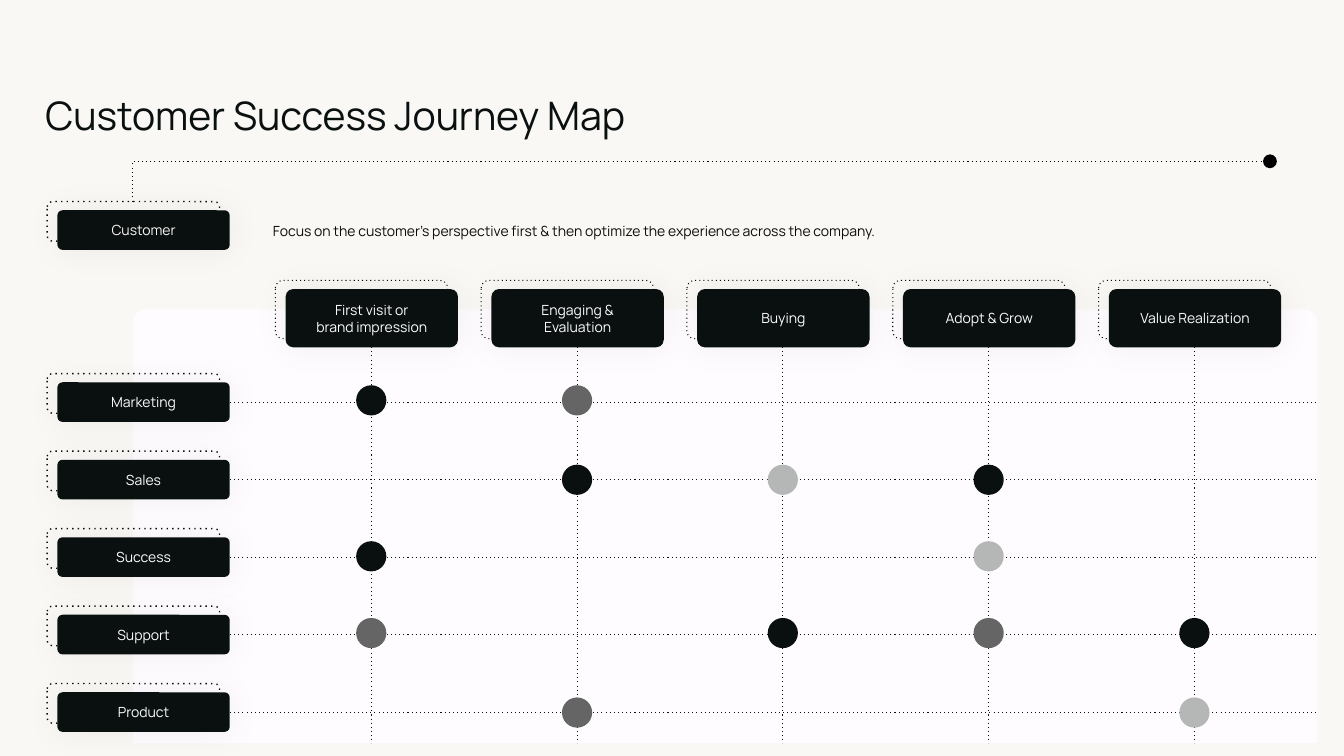
from lxml.etree import SubElement
from pptx import Presentation
from pptx.dml.color import RGBColor
from pptx.enum.dml import MSO_LINE
from pptx.enum.shapes import MSO_CONNECTOR, MSO_SHAPE
from pptx.enum.text import MSO_ANCHOR, MSO_AUTO_SIZE, PP_ALIGN
from pptx.oxml.ns import qn
from pptx.util import Pt

INK, PAPER, PANEL, GREY, SILVER = "09100F", "F9F8F5", "FEFCFF", "656565", "B5B7B7"
TEAMS = ["Marketing", "Sales", "Success", "Support", "Product"]
STAGES = ["First visit or\nbrand impression", "Engaging &\nEvaluation", "Buying",
          "Adopt & Grow", "Value Realization"]
# For each team: its marker height, then stage number and colour
MARKERS = [
    (286, {0: INK, 1: GREY}),
    (342.7, {1: INK, 2: SILVER, 3: INK}),
    (397.4, {0: INK, 3: SILVER}),
    (452.2, {0: GREY, 2: INK, 3: GREY, 4: INK}),
    (509, {1: GREY, 4: SILVER}),
]
COLUMN_X, COLUMN_STEP = 265.2, 147
ROW_Y, ROW_STEP = 287.4, 55.35
PANEL_RIGHT, PANEL_BOTTOM = 941, 531
BOX_WIDTH, TEAM_HEIGHT, STAGE_HEIGHT = 123.1, 28.3, 41.6
MARKER_SIZE = 21.6


def color(value):
    return RGBColor.from_string(value)


def write(shape, text, size=10, ink=PANEL, align=PP_ALIGN.CENTER,
          anchor=MSO_ANCHOR.MIDDLE, inset=None, space_after=0):
    """Fill the shape with one paragraph per line of text."""
    frame = shape.text_frame
    frame.word_wrap = True
    frame.auto_size = MSO_AUTO_SIZE.NONE
    frame.vertical_anchor = anchor
    if inset is not None:
        frame.margin_left = frame.margin_right = Pt(inset)
        frame.margin_top = frame.margin_bottom = Pt(inset)
    frame.text = text
    for para in frame.paragraphs:
        para.alignment = align
        para.space_before, para.space_after = Pt(0), Pt(space_after)
        for span in para.runs:
            span.font.name, span.font.size = "Manrope", Pt(size)
            span.font.color.rgb = color(ink)


deck = Presentation()
deck.slide_width, deck.slide_height = Pt(960), Pt(540)
page = deck.slides.add_slide(deck.slide_layouts[5])
page.background.fill.solid()
page.background.fill.fore_color.rgb = color(PAPER)
shapes = page.shapes

# Title and introduction
title = shapes.title
title.left, title.top, title.width, title.height = Pt(32.4), Pt(65.5), Pt(664.6), Pt(36.7)
title.fill.solid()
title.fill.fore_color.rgb = color(PAPER)
write(title, "Customer Success Journey Map", size=28, ink=INK, align=PP_ALIGN.LEFT,
      anchor=MSO_ANCHOR.TOP, inset=0, space_after=10)
intro = shapes.add_textbox(Pt(187.9), Pt(155.5), Pt(488.9), Pt(19.4))
write(intro, "Focus on the customer’s perspective first & then optimize the experience "
      "across the company.", ink="0C0C0C", align=PP_ALIGN.LEFT, anchor=MSO_ANCHOR.TOP)

# Panel behind the grid
panel = shapes.add_shape(MSO_SHAPE.ROUND_2_SAME_RECTANGLE, Pt(95), Pt(221),
                         Pt(PANEL_RIGHT - 95), Pt(PANEL_BOTTOM - 221))
panel.adjustments[0], panel.adjustments[1] = 0.03, 0
panel.shadow.inherit = False
panel.fill.solid()
panel.fill.fore_color.rgb = color(PANEL)
panel.line.fill.background()

# Grid lines and the elbow from the customer box
grid = []
for index in range(5):
    x, y = COLUMN_X + index * COLUMN_STEP, ROW_Y + index * ROW_STEP
    grid.append((158.4, y, PANEL_RIGHT, y))
    grid.append((x, 248, x, PANEL_BOTTOM))
dotted = []
for ends in grid:
    line = shapes.add_connector(MSO_CONNECTOR.STRAIGHT, *map(Pt, ends))
    dotted.append((line, 0.75, INK))
elbow = shapes.add_connector(MSO_CONNECTOR.ELBOW, Pt(486.6), Pt(-276.5), Pt(515.4), Pt(535.7))
elbow._element.spPr.find(qn("a:prstGeom")).set("prst", "bentConnector2")
elbow._element.spPr.find(qn("a:xfrm")).set("rot", str(270 * 60000))
dotted.append((elbow, 0.75, "000000"))
for line, _, _ in dotted:
    SubElement(line._element.spPr, qn("a:effectLst"))

# Markers
for center_y, stage_colors in MARKERS:
    for stage, fill in stage_colors.items():
        center_x = COLUMN_X + stage * COLUMN_STEP
        marker = shapes.add_shape(MSO_SHAPE.OVAL, Pt(center_x - MARKER_SIZE / 2),
                                  Pt(center_y - MARKER_SIZE / 2),
                                  Pt(MARKER_SIZE), Pt(MARKER_SIZE))
        marker.shadow.inherit = False
        marker.fill.solid()
        marker.fill.fore_color.rgb = color(fill)
        marker.line.fill.background()

# Label boxes, each with a dotted outline behind
labels = [("Customer", 41, 150.2, TEAM_HEIGHT, 1, PAPER)]
for index, (team, stage) in enumerate(zip(TEAMS, STAGES)):
    labels.append((team, 41, 273.1 + index * ROW_STEP, TEAM_HEIGHT, 1, PANEL))
    labels.append((stage, 204 + index * COLUMN_STEP, 206.5, STAGE_HEIGHT, 0.75, PANEL))
for text, left, top, height, weight, ink in labels:
    outline, box = [
        shapes.add_shape(MSO_SHAPE.ROUNDED_RECTANGLE, Pt(left - shift_x), Pt(top - shift_y),
                         Pt(BOX_WIDTH), Pt(height))
        for shift_x, shift_y in ((7.3, 6.2), (0, 0))
    ]
    outline.fill.background()
    dotted.append((outline, weight, INK))
    box.fill.solid()
    box.fill.fore_color.rgb = color(INK)
    box.line.fill.background()
    write(box, text, ink=ink)
    for shape in (outline, box):
        shape.adjustments[0] = 0.13
        shape.shadow.inherit = False
        effects = shape._element.spPr.find(qn("a:effectLst"))
        shadow = SubElement(effects, qn("a:outerShdw"), blurRad=str(Pt(23)), dist="0",
                            dir="0", algn="ctr", rotWithShape="0")
        shade = SubElement(shadow, qn("a:srgbClr"), val="000000")
        SubElement(shade, qn("a:alpha"), val="5000")

# Dotted strokes
for shape, weight, ink in dotted:
    shape.line.color.rgb = color(ink)
    shape.line.width = Pt(weight)
    shape.line.dash_style = MSO_LINE.ROUND_DOT
    shape._element.xpath(".//a:prstDash")[0].set("val", "dot")
stroke = elbow._element.spPr.find(qn("a:ln"))
SubElement(stroke, qn("a:tailEnd"), type="oval", w="lg", len="lg")

deck.save("out.pptx")
